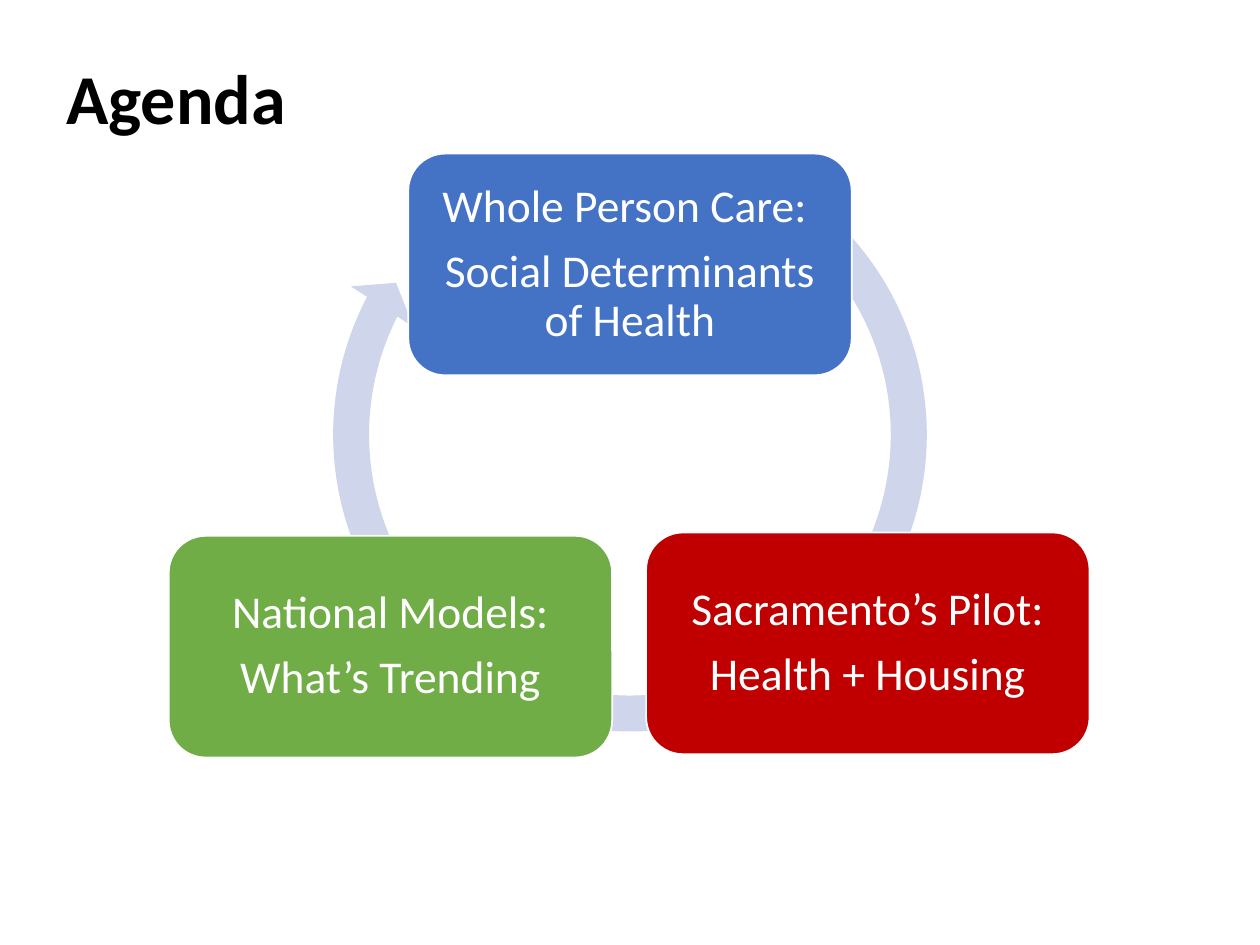
from pptx import Presentation
from pptx.dml.color import RGBColor
from pptx.enum.shapes import MSO_SHAPE
from pptx.enum.text import MSO_ANCHOR, PP_ALIGN
from pptx.util import Pt

BLACK = RGBColor(0x00, 0x00, 0x00)
WHITE = RGBColor(0xFF, 0xFF, 0xFF)
BLUE = RGBColor(0x44, 0x72, 0xC4)
GREEN = RGBColor(0x70, 0xAD, 0x47)
RED = RGBColor(0xC0, 0x00, 0x00)
PALE_BLUE = RGBColor(0xCF, 0xD5, 0xEA)

CARD_WIDTH, CARD_HEIGHT = 253.4, 126.7
CARDS = [
    (233.3, 87.8, BLUE, ["Whole Person Care: ", "Social Determinants of Health"]),
    (96.4, 306.2, GREEN, ["National Models:", "What’s Trending"]),
    (369.2, 304.3, RED, ["Sacramento’s Pilot:", "Health + Housing"]),
]


class AgendaSlide:
    font_name = "Calibri"
    title_size = 40
    card_size = 26
    card_inset = 7.8

    def __init__(self, presentation):
        self.slide = presentation.slides.add_slide(presentation.slide_layouts[5])

    def style_paragraph(self, paragraph, size, color, bold=False):
        paragraph.alignment = PP_ALIGN.CENTER
        paragraph.line_spacing = 0.9
        font = paragraph.font
        font.name, font.size, font.bold = self.font_name, Pt(size), bold
        font.color.rgb = color

    def title(self, text, left, top, width, height):
        title = self.slide.shapes.title
        title.left, title.top = Pt(left), Pt(top)
        title.width, title.height = Pt(width), Pt(height)
        frame = title.text_frame
        frame.text = text
        frame.vertical_anchor = MSO_ANCHOR.TOP
        self.style_paragraph(frame.paragraphs[0], self.title_size, BLACK, bold=True)

    def filled_shape(self, kind, left, top, width, height, color):
        shape = self.slide.shapes.add_shape(kind, Pt(left), Pt(top), Pt(width), Pt(height))
        shape.shadow.inherit = False
        shape.fill.solid()
        shape.fill.fore_color.rgb = color
        return shape

    def cycle_arrow(self, left, top, size):
        arrow = self.filled_shape(MSO_SHAPE.CIRCULAR_ARROW, left, top, size, size, PALE_BLUE)
        arrow.line.fill.background()
        # Ring width, head angle, end angle, start angle, head width
        for index, value in enumerate((0.05689, 3.405, 124.388, 182.576, 0.05908)):
            arrow.adjustments[index] = value

    def card(self, left, top, color, lines):
        card = self.filled_shape(
            MSO_SHAPE.ROUNDED_RECTANGLE, left, top, CARD_WIDTH, CARD_HEIGHT, color)
        card.line.color.rgb = WHITE
        card.line.width = Pt(1)
        frame = card.text_frame
        frame.word_wrap = True
        frame.vertical_anchor = MSO_ANCHOR.MIDDLE
        frame.margin_left = frame.margin_right = Pt(self.card_inset)
        frame.margin_top = frame.margin_bottom = Pt(self.card_inset)
        frame.text = "\n".join(lines)
        for paragraph in frame.paragraphs:
            self.style_paragraph(paragraph, self.card_size, WHITE)
            paragraph.space_after = Pt(9)


def main():
    presentation = Presentation()
    presentation.slide_width, presentation.slide_height = Pt(720), Pt(540)
    agenda = AgendaSlide(presentation)
    agenda.title("Agenda ", 10.8, 33.1, 188.6, 216)
    agenda.cycle_arrow(179.3, 67.7, 361.4)
    for card in CARDS:
        agenda.card(*card)
    presentation.save("out.pptx")


if __name__ == "__main__":
    main()
